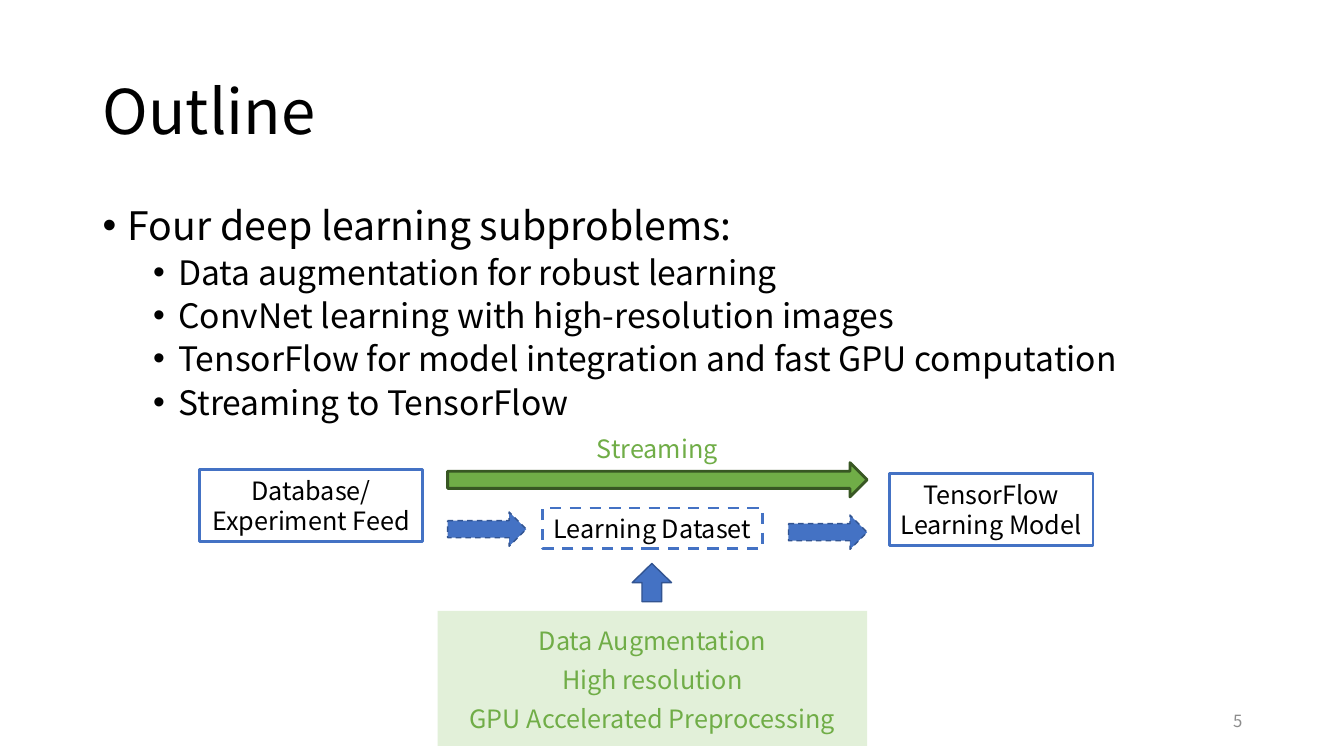
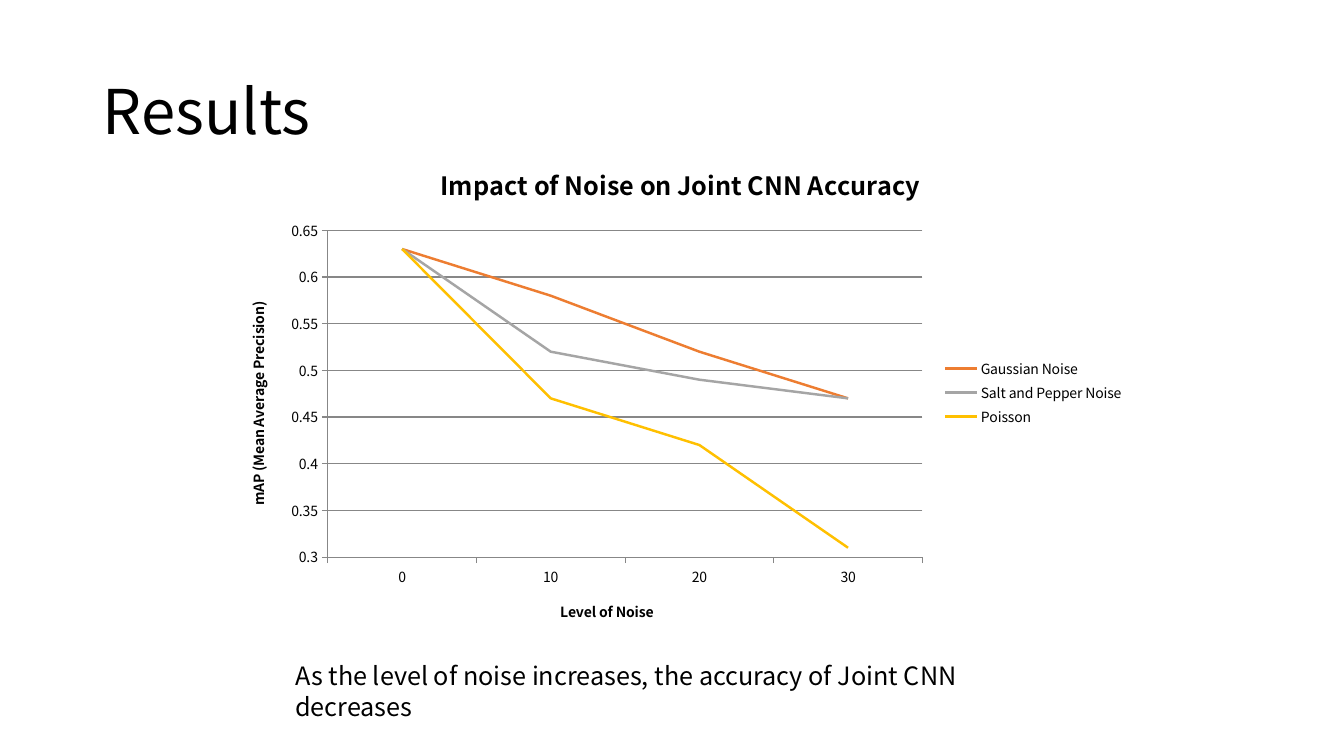
from lxml import etree
from pptx import Presentation
from pptx.chart.data import CategoryChartData
from pptx.dml.color import RGBColor
from pptx.enum.chart import XL_CHART_TYPE, XL_LEGEND_POSITION, XL_TICK_MARK
from pptx.enum.dml import MSO_LINE
from pptx.enum.shapes import MSO_SHAPE
from pptx.enum.text import MSO_ANCHOR, PP_ALIGN
from pptx.oxml.ns import qn
from pptx.util import Inches, Pt

RECT, RIGHT, UP = MSO_SHAPE.RECTANGLE, MSO_SHAPE.RIGHT_ARROW, MSO_SHAPE.UP_ARROW
LEFT, MID, END = PP_ALIGN.LEFT, PP_ALIGN.CENTER, PP_ALIGN.RIGHT
TOP, CENTRE = MSO_ANCHOR.TOP, MSO_ANCHOR.MIDDLE
DASH = MSO_LINE.DASH
LINE, KEY, OUT = XL_CHART_TYPE.LINE, XL_LEGEND_POSITION.RIGHT, XL_TICK_MARK.OUTSIDE

FACE = "Noto Sans CJK SC"
BLACK, GREY, AXIS = "000000", "8C8C8C", "878787"
BLUE, NAVY = "4472C4", "325491"
GREEN, PINE, MINT = "70AD47", "385723", "E2F0D9"
PITCH = 1.2  # line height per point of text
TITLE = (0.92, 0.4, 11.5, 1.45)


def colour(code):
    return RGBColor.from_string(code)


def apply(item, values):
    for name, value in values.items():
        setattr(item, name, value)


def place(item, box):
    names = ("left", "top", "width", "height")
    apply(item, dict(zip(names, map(Inches, box))))


def style(font, size, code=BLACK, bold=False):
    apply(font, {"name": FACE, "size": Pt(size), "bold": bold})
    font.color.rgb = colour(code)


def write(frame, lines, size=18, code=BLACK, align=MID, anchor=CENTRE,
          wrap=True, tight=1):
    apply(frame, {"word_wrap": wrap, "vertical_anchor": anchor})
    for i, line in enumerate(lines):
        para = frame.add_paragraph() if i else frame.paragraphs[0]
        apply(para, {"text": line, "alignment": align,
                     "line_spacing": Pt(round(size * PITCH * tight, 1))})
        style(para.runs[0].font, size, code)


def label(slide, box, *lines, **form):
    frame = slide.shapes.add_textbox(*map(Inches, box)).text_frame
    write(frame, lines, **form)
    return frame


def block(slide, kind, box, fill=None, line=None, width=1, dash=None):
    shape = slide.shapes.add_shape(kind, *map(Inches, box))
    shape.shadow.inherit = False
    for part, code in ((shape.fill, fill), (shape.line.fill, line)):
        if code:
            part.solid()
            part.fore_color.rgb = colour(code)
        else:
            part.background()
    if line:
        apply(shape.line, {"width": Pt(width), "dash_style": dash})
    return shape


def start(deck, title):
    slide = deck.slides.add_slide(deck.slide_layouts[5])
    place(slide.shapes.title, TITLE)
    write(slide.shapes.title.text_frame, [title], 44, align=LEFT, tight=0.9)
    return slide


def bullets(slide, box, head, items):
    frame = label(slide, box, head, *items, align=LEFT, anchor=TOP)
    for i, para in enumerate(frame.paragraphs):
        level, size, gap, indent = (1, 24, 5, 0.75) if i else (0, 28, 10, 0.25)
        apply(para, {"level": level, "space_before": Pt(gap),
                     "line_spacing": Pt(round(size * PITCH * 0.9, 1))})
        para.runs[0].font.size = Pt(size)
        props = para._p.get_or_add_pPr()
        props.set("marL", str(Inches(indent)))
        props.set("indent", str(Inches(-0.25)))
        etree.SubElement(props, qn("a:buFont")).set("typeface", "Arial")
        etree.SubElement(props, qn("a:buChar")).set("char", "•")


def flow(slide, box):
    """Draw the data path from the feed to the model."""
    x, y = box[:2]

    def at(left, top, width, height):
        return x + left, y + top, width, height

    nodes = [
        ((0, 0.41, 2.21, 0.71), ["Database/", "Experiment Feed"], None, False),
        ((3.4, 0.79, 2.18, 0.4), ["Learning Dataset"], DASH, False),
        ((6.84, 0.45, 2.02, 0.71), ["TensorFlow Learning Model"], None, True),
    ]
    for spot, lines, dash, wrap in nodes:
        node = block(slide, RECT, at(*spot), line=BLUE, width=2, dash=dash)
        write(node.text_frame, lines, wrap=wrap)

    arrows = [
        (RIGHT, (2.46, 0.83, 0.78, 0.34), BLUE, NAVY, 1, DASH),
        (RIGHT, (5.84, 0.86, 0.78, 0.34), BLUE, NAVY, 1, DASH),
        (UP, (4.29, 1.34, 0.39, 0.38), BLUE, NAVY, 1, None),
        (RIGHT, (2.46, 0.34, 4.16, 0.34), GREEN, PINE, 2, None),
    ]
    for kind, spot, *look in arrows:
        block(slide, kind, at(*spot), *look)
    label(slide, at(3.83, 0, 1.42, 0.4), "Streaming", code=GREEN, wrap=False)


def steps(slide, box, names):
    """Draw a tinted panel with one line for each step."""
    x, y, width, _ = box
    block(slide, RECT, box, MINT)
    for i, name in enumerate(names):
        label(slide, (x, y + 0.09 + i * 0.39, width, 0.4), name, code=GREEN)


def plot(slide, box, title, cats, series):
    data = CategoryChartData()
    data.categories = cats
    for name, _, values in series:
        data.add_series(name, values)
    chart = slide.shapes.add_chart(LINE, *map(Inches, box), data).chart
    style(chart.font, 10)
    chart.has_title = True
    chart.has_legend = True
    apply(chart.legend, {"position": KEY, "include_in_layout": False})
    chart.plots[0].vary_by_categories = False

    across, up = chart.category_axis, chart.value_axis
    apply(up, {"minimum_scale": 0.3, "maximum_scale": 0.65,
               "major_unit": 0.05, "has_major_gridlines": True})
    apply(up.tick_labels, {"number_format": "General",
                           "number_format_is_linked": False})
    heads = ((chart, title, 18), (across, "Level of Noise", 10),
             (up, "mAP (Mean Average Precision)", 10))
    for owner, text, size in heads:
        head = owner.chart_title if owner is chart else owner.axis_title
        head.text_frame.text = text
        style(head.text_frame.paragraphs[0].runs[0].font, size, bold=True)
    for axis in (across, up):
        axis.major_tick_mark = OUT
    for rule in (across.format.line, up.format.line, up.major_gridlines.format.line):
        rule.color.rgb = colour(AXIS)
        rule.width = Pt(0.75)

    for curve, (_, code, _) in zip(chart.plots[0].series, series):
        curve.smooth = False
        curve.format.line.color.rgb = colour(code)
        curve.format.line.width = Pt(1.75)


def outline(deck):
    slide = start(deck, "Outline")
    steps(slide, (4.34, 6.06, 4.26, 1.34),
          ["Data Augmentation", "High resolution", "GPU Accelerated Preprocessing"])
    bullets(slide, (0.92, 2, 11.5, 4.76), "Four deep learning subproblems:", [
        "Data augmentation for robust learning",
        "ConvNet learning with high-resolution images",
        "TensorFlow for model integration and fast GPU computation",
        "Streaming to TensorFlow",
    ])
    flow(slide, (1.98, 4.25, 8.86, 1.72))
    label(slide, (9.42, 6.95, 3, 0.4), "5", size=12, code=GREY, align=END)


def results(deck):
    slide = start(deck, "Results")
    plot(slide, (2.25, 1.42, 9, 4.95), "Impact of Noise on Joint CNN Accuracy",
         ["0", "10", "20", "30"], [
             ("Gaussian Noise", "ED7D31", (0.63, 0.58, 0.52, 0.47)),
             ("Salt and Pepper Noise", "A5A5A5", (0.63, 0.52, 0.49, 0.47)),
             ("Poisson", "FFC000", (0.63, 0.47, 0.42, 0.31)),
         ])
    label(slide, (2.83, 6.5, 7.08, 0.71),
          "As the level of noise increases, the accuracy of Joint CNN decreases",
          align=LEFT)


def main():
    deck = Presentation()
    apply(deck, {"slide_width": Inches(13.33), "slide_height": Inches(7.5)})
    outline(deck)
    results(deck)
    deck.save("out.pptx")


if __name__ == "__main__":
    main()
